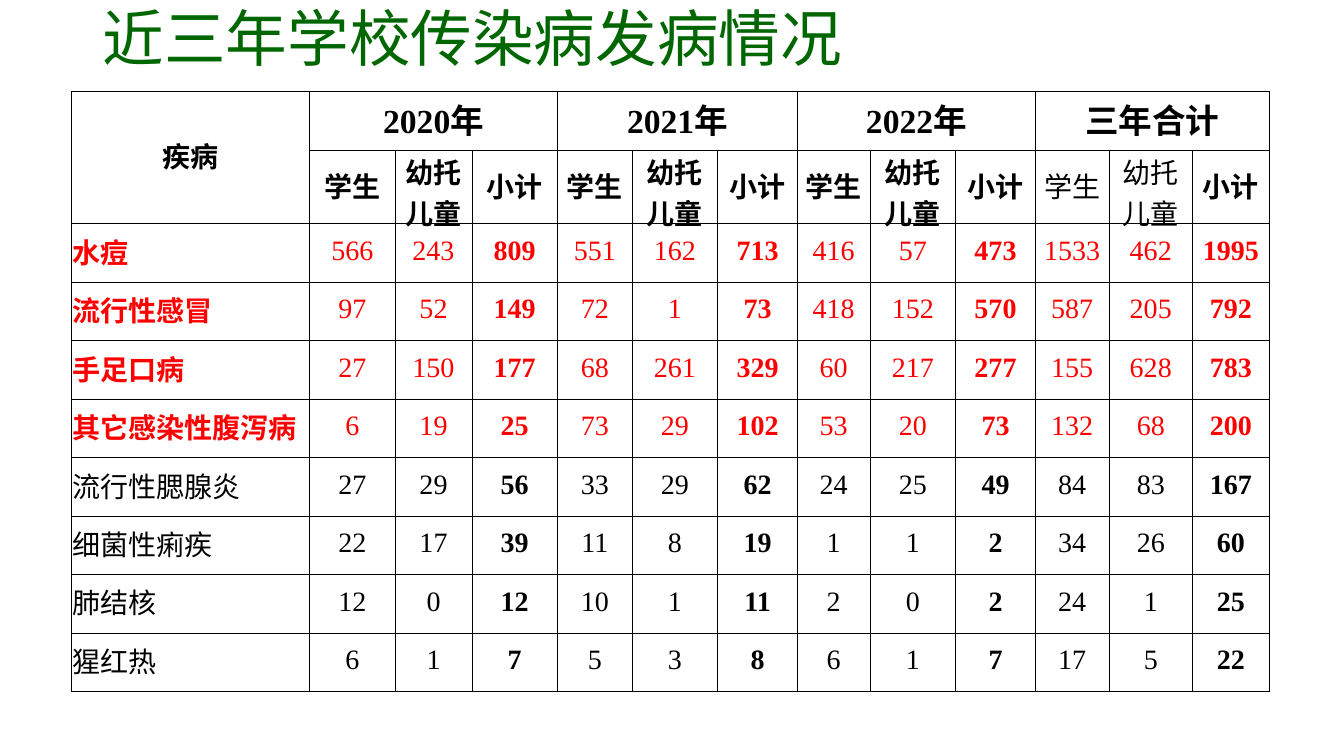
from dataclasses import dataclass

from lxml import etree
from pptx import Presentation
from pptx.dml.color import RGBColor
from pptx.enum.text import MSO_ANCHOR, PP_ALIGN
from pptx.oxml.ns import qn
from pptx.util import Inches, Pt

MIDDLE = MSO_ANCHOR.MIDDLE
LEFT, CENTER = PP_ALIGN.LEFT, PP_ALIGN.CENTER


@dataclass(frozen=True)
class Theme:
    font: str = "Times New Roman"
    title: str = "006600"
    ink: str = "000000"
    alert: str = "FF0000"
    head_size: int = 44
    year_size: int = 24
    body_size: int = 20
    rule: float = 0.5


THEME = Theme()
TITLE = "近三年学校传染病发病情况"
YEARS = ["2020年", "2021年", "2022年", "三年合计"]
GROUPS = ["学生", "幼托儿童", "小计"]
# Disease, then (pupils, nursery children) for each year
CASES = [
    ("水痘", (566, 243), (551, 162), (416, 57)),
    ("流行性感冒", (97, 52), (72, 1), (418, 152)),
    ("手足口病", (27, 150), (68, 261), (60, 217)),
    ("其它感染性腹泻病", (6, 19), (73, 29), (53, 20)),
    ("流行性腮腺炎", (27, 29), (33, 29), (24, 25)),
    ("细菌性痢疾", (22, 17), (11, 8), (1, 1)),
    ("肺结核", (12, 0), (10, 1), (2, 0)),
    ("猩红热", (6, 1), (5, 3), (6, 1)),
]
ALERTS = 4
WIDTHS = [2.36, 0.85, 0.76, 0.85, 0.74, 0.85, 0.79,
          0.72, 0.85, 0.79, 0.73, 0.83, 0.76]
HEIGHTS = [0.58, 0.73] + [0.58] * len(CASES)
INSETS = {
    "margin_left": Inches(0.01),
    "margin_right": Inches(0.01),
    "margin_top": Inches(0.01),
    "margin_bottom": Inches(0.05),
    "vertical_anchor": MIDDLE,
}


def apply(target, values):
    for name, value in values.items():
        setattr(target, name, value)


def write(frame, text, size, color, bold=False, align=LEFT):
    para = frame.paragraphs[0]
    para.alignment = align
    run = para.add_run()
    run.text = text
    apply(run.font, {"name": THEME.font, "size": Pt(size), "bold": bold})
    run.font.color.rgb = RGBColor.from_string(color)
    return para


def rule_cell(cell):
    """Clear the fill and draw all four borders."""
    cell.fill.background()
    props = cell._tc.get_or_add_tcPr()
    for spot, side in enumerate(("lnL", "lnR", "lnT", "lnB")):
        line = etree.Element(qn("a:" + side), w=str(Pt(THEME.rule)))
        fill = etree.SubElement(line, qn("a:solidFill"))
        etree.SubElement(fill, qn("a:srgbClr"), val=THEME.ink)
        props.insert(spot, line)


def add_title(slide, left, top, width, height):
    box = slide.shapes.add_textbox(*map(Inches, (left, top, width, height)))
    frame = box.text_frame
    apply(frame, {"word_wrap": True, "vertical_anchor": MIDDLE})
    write(frame, TITLE, THEME.head_size, THEME.title).line_spacing = 0.9


def count_row(years):
    """Add each year's subtotal and the three-year total."""
    total = tuple(map(sum, zip(*years)))
    return [n for pair in (*years, total) for n in (*pair, sum(pair))]


def fill_head(table):
    style = {"color": THEME.ink, "align": CENTER}
    corner = table.cell(0, 0)
    corner.merge(table.cell(1, 0))
    write(corner.text_frame, "疾病", THEME.body_size, bold=True, **style)
    span = len(GROUPS)
    for i, year in enumerate(YEARS):
        first = 1 + i * span
        cell = table.cell(0, first)
        cell.merge(table.cell(0, first + span - 1))
        write(cell.text_frame, year, THEME.year_size, bold=True, **style)
        for j, group in enumerate(GROUPS):
            bold = year != YEARS[-1] or group == GROUPS[-1]
            write(table.cell(1, first + j).text_frame, group,
                  THEME.body_size, bold=bold, **style)


def fill_body(table):
    for i, (name, *years) in enumerate(CASES):
        alert = i < ALERTS
        color = THEME.alert if alert else THEME.ink
        row = i + 2
        write(table.cell(row, 0).text_frame, name, THEME.body_size,
              color, alert)
        for col, count in enumerate(count_row(years), 1):
            write(table.cell(row, col).text_frame, str(count),
                  THEME.body_size, color, col % len(GROUPS) == 0, CENTER)


def add_cases(slide, left, top):
    box = map(Inches, (left, top, sum(WIDTHS), sum(HEIGHTS)))
    table = slide.shapes.add_table(len(HEIGHTS), len(WIDTHS), *box).table
    apply(table, {"first_row": False, "horz_banding": False})
    for column, width in zip(table.columns, WIDTHS):
        column.width = Inches(width)
    for row, height in zip(table.rows, HEIGHTS):
        row.height = Inches(height)
    for cell in table.iter_cells():
        apply(cell, INSETS)
        rule_cell(cell)
    fill_head(table)
    fill_body(table)


def main():
    deck = Presentation()
    apply(deck, {"slide_width": Inches(13.33), "slide_height": Inches(7.5)})
    slide = deck.slides.add_slide(deck.slide_layouts[6])
    add_title(slide, 0.92, 0, 11.5, 0.83)
    add_cases(slide, 0.71, 0.91)
    deck.save("out.pptx")


if __name__ == "__main__":
    main()
